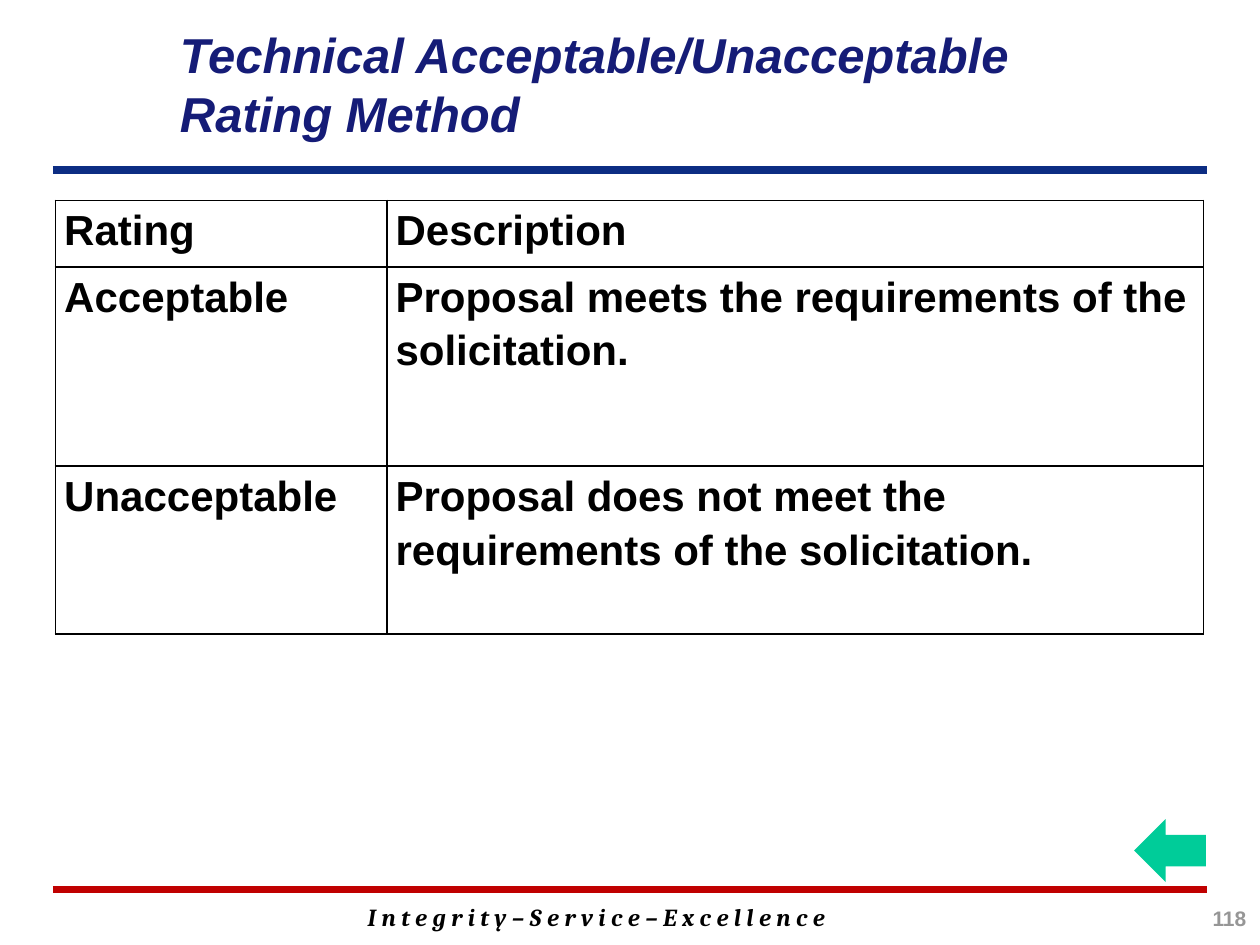
from lxml import etree
from pptx import Presentation
from pptx.dml.color import RGBColor
from pptx.enum.shapes import MSO_CONNECTOR, MSO_SHAPE
from pptx.enum.text import MSO_ANCHOR, PP_ALIGN
from pptx.oxml.ns import qn
from pptx.util import Inches, Pt

STRAIGHT = MSO_CONNECTOR.STRAIGHT
RIGHT_ARROW = MSO_SHAPE.RIGHT_ARROW
TOP, MIDDLE = MSO_ANCHOR.TOP, MSO_ANCHOR.MIDDLE
LEFT, RIGHT = PP_ALIGN.LEFT, PP_ALIGN.RIGHT

COLORS = {
    "title": "151C77", "header_rule": "0C2D83", "footer_rule": "C00000",
    "text": "000000", "number": "969696", "arrow": "00CC99",
}
RULES = [(1.35, "header_rule"), (7.06, "footer_rule")]
RULE_LEFT, RULE_RIGHT = 0.42, 9.58

TEXTS = [
    ("Technical Acceptable/Unacceptable Rating Method", (1.33, 0, 7.25, 1.33), MIDDLE, LEFT,
     "title", {"name": "Arial", "size": Pt(28), "bold": True, "italic": True}),
    ("118", (8.74, 7.14, 1.25, 0.33), TOP, RIGHT,
     "number", {"name": "Arial", "size": Pt(12), "bold": True}),
    ("I n t e g r i t y – S e r v i c e – E x c e l l e n c e", (2.82, 7.11, 7.01, 0.34), TOP, LEFT,
     "text", {"name": "Cambria", "size": Pt(14), "bold": True, "italic": True}),
]

RATINGS = [
    ("Rating", "Description"),
    ("Acceptable", "Proposal meets the requirements of the solicitation."),
    ("Unacceptable", "Proposal does not meet the requirements of the solicitation."),
]
COLUMN_WIDTHS = [2.63, 6.48]
ROW_HEIGHTS = [0.53, 1.58, 1.33]
CELL_FONT = {"name": "Arial", "size": Pt(24), "bold": True}
CELL_FORMAT = {
    "margin_left": Inches(0.07), "margin_right": Inches(0.07),
    "margin_top": 0, "margin_bottom": 0, "vertical_anchor": TOP,
}


def rgb(role):
    return RGBColor.from_string(COLORS[role])


def apply(target, values):
    for attribute, value in values.items():
        setattr(target, attribute, value)


def style_font(font, values, role):
    apply(font, values)
    font.color.rgb = rgb(role)


def add_rule(slide, y, role):
    rule = slide.shapes.add_connector(
        STRAIGHT, Inches(RULE_LEFT), Inches(y), Inches(RULE_RIGHT), Inches(y))
    rule.line.color.rgb = rgb(role)
    rule.line.width = Pt(4.5)
    etree.SubElement(rule._element.spPr, qn("a:effectLst"))


def add_text(slide, text, place, anchor, align, role, font_values):
    frame = slide.shapes.add_textbox(*map(Inches, place)).text_frame
    apply(frame, {"word_wrap": True, "vertical_anchor": anchor})
    paragraph = frame.paragraphs[0]
    paragraph.text = text
    paragraph.alignment = align
    style_font(paragraph.runs[0].font, font_values, role)


def add_borders(cell):
    properties = cell._tc.get_or_add_tcPr()
    for side in ("lnL", "lnR", "lnT", "lnB"):
        border = etree.SubElement(properties, qn(f"a:{side}"), w=str(Pt(1)))
        fill = etree.SubElement(border, qn("a:solidFill"))
        etree.SubElement(fill, qn("a:srgbClr"), val=COLORS["text"])


def add_ratings(slide):
    table = slide.shapes.add_table(
        len(RATINGS), len(COLUMN_WIDTHS), Inches(0.44), Inches(1.59),
        Inches(sum(COLUMN_WIDTHS)), Inches(sum(ROW_HEIGHTS))).table
    apply(table, {"first_row": False, "horz_banding": False})
    for column, width in zip(table.columns, COLUMN_WIDTHS):
        column.width = Inches(width)
    for row, height, texts in zip(table.rows, ROW_HEIGHTS, RATINGS):
        row.height = Inches(height)
        for cell, text in zip(row.cells, texts):
            apply(cell, CELL_FORMAT)
            add_borders(cell)
            cell.fill.background()
            paragraph = cell.text_frame.paragraphs[0]
            paragraph.text = text
            paragraph.line_spacing = 1.15
            style_font(paragraph.runs[0].font, CELL_FONT, "text")


def add_back_arrow(slide):
    arrow = slide.shapes.add_shape(
        RIGHT_ARROW, Inches(9), Inches(6.5), Inches(0.57), Inches(0.5))
    arrow.rotation = 180
    arrow.shadow.inherit = False
    arrow.fill.solid()
    arrow.fill.fore_color.rgb = rgb("arrow")
    arrow.line.fill.background()


def main():
    deck = Presentation()
    deck.slide_width, deck.slide_height = Inches(10), Inches(7.5)
    slide = deck.slides.add_slide(deck.slide_layouts[6])
    for rule in RULES:
        add_rule(slide, *rule)
    for text in TEXTS:
        add_text(slide, *text)
    add_ratings(slide)
    add_back_arrow(slide)
    deck.save("out.pptx")


if __name__ == "__main__":
    main()
